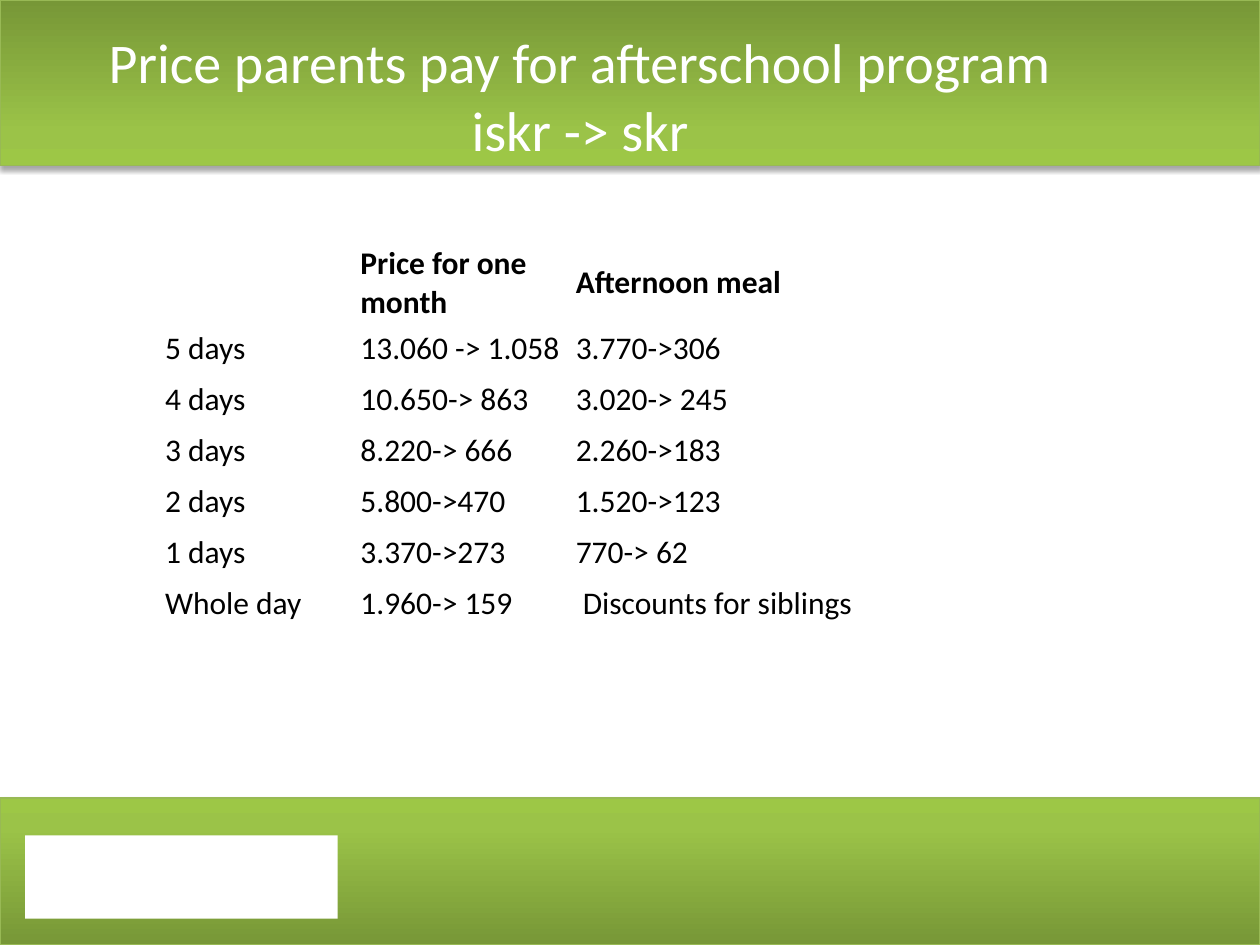
from pptx import Presentation
from pptx.dml.color import RGBColor as RGB
from pptx.enum.shapes import MSO_SHAPE as Shape
from pptx.enum.text import MSO_ANCHOR as Anchor, PP_ALIGN as Align
from pptx.oxml import parse_xml
from pptx.util import Pt

WIDE, HIGH = 720, 540
HUES = {"dark": "779737", "mid": "9BC348", "light": "9DC746",
        "edge": "98B955", "white": "FFFFFF", "black": "000000"}
TITLE = "Price parents pay for afterschool program\viskr -> skr"
ROWS = [
    ("", "Price for one month", "Afternoon meal"),
    ("5 days", "13.060 -> 1.058", "3.770->306"),
    ("4 days", "10.650-> 863", "3.020-> 245"),
    ("3 days", "8.220-> 666", "2.260->183"),
    ("2 days", "5.800->470", "1.520->123"),
    ("1 days", "3.370->273", "770-> 62"),
    ("Whole day", "1.960-> 159", " Discounts for siblings"),
]
COLS = (111.6, 123.1, 196.2)
ROW_H = 29.2
BARS = [(456, 84, 0), (0, 94.5, 180)]  # top, height, turn
STOPS = [(0, "dark"), (80, "mid"), (100, "light")]
LOOKS = {
    "title": {"size": Pt(32), "name": "Calibri", "bold": False},
    "head": {"size": Pt(18), "name": "Calibri", "bold": True},
    "body": {"size": Pt(18), "name": "Calibri", "bold": False},
}
CELL = {"vertical_anchor": Anchor.MIDDLE, "margin_left": Pt(0.75),
        "margin_right": Pt(0.75), "margin_top": Pt(0.75),
        "margin_bottom": Pt(0.75)}
NS = 'xmlns:a="http://schemas.openxmlformats.org/drawingml/2006/main"'


def color(name):
    return RGB.from_string(HUES[name])


def apply(item, vals):
    for key, val in vals.items():
        setattr(item, key, val)


def style(para, look, hue):
    for run in para.runs:
        apply(run.font, LOOKS[look])
        run.font.color.rgb = color(hue)


def add_box(slide, left, top, wide, high):
    return slide.shapes.add_shape(
        Shape.RECTANGLE, Pt(left), Pt(top), Pt(wide), Pt(high))


def add_bar(slide, top, high, turn):
    """Add a full-width gradient band with a soft shadow below."""
    bar = add_box(slide, 0, top, WIDE, high)
    bar.rotation = turn
    bar.fill.gradient()
    bar.fill.gradient_angle = 90
    stops = "".join(
        f'<a:gs pos="{pos * 1000}"><a:srgbClr val="{HUES[hue]}"/></a:gs>'
        for pos, hue in STOPS)
    props = bar.element.spPr
    old = next(props.iter("{*}gsLst"))
    old.getparent().replace(old, parse_xml(f"<a:gsLst {NS}>{stops}</a:gsLst>"))
    bar.line.color.rgb = color("edge")
    bar.line.width = Pt(0.75)
    props.append(parse_xml(
        f'<a:effectLst {NS}><a:outerShdw blurRad="{Pt(3.1)}" dist="{Pt(1.8)}"'
        f' dir="5400000" rotWithShape="0"><a:srgbClr val="{HUES["black"]}">'
        '<a:alpha val="35000"/></a:srgbClr></a:outerShdw></a:effectLst>'))


def add_prices(slide):
    frame = slide.shapes.add_table(
        len(ROWS), len(COLS), Pt(93.6), Pt(139),
        Pt(sum(COLS)), Pt(ROW_H * len(ROWS)))
    table = frame.table
    apply(table, {"first_row": False, "horz_banding": False})
    for col, wide in zip(table.columns, COLS):
        col.width = Pt(wide)
    for r, row in enumerate(ROWS):
        table.rows[r].height = Pt(ROW_H)
        for c, text in enumerate(row):
            cell = table.cell(r, c)
            apply(cell, CELL)
            cell.fill.background()
            cell.text = text
            style(cell.text_frame.paragraphs[0],
                  "body" if r else "head", "black")


def set_title(slide):
    title = slide.shapes.title
    apply(title, {"left": Pt(42.5), "top": Pt(9.4),
                  "width": Pt(578), "height": Pt(90)})
    frame = title.text_frame
    frame.text = TITLE
    apply(frame, {"vertical_anchor": Anchor.MIDDLE, "word_wrap": True})
    para = frame.paragraphs[0]
    para.alignment = Align.CENTER
    style(para, "title", "white")
    title.element.getparent().append(title.element)  # bring to front


def main():
    deck = Presentation()
    deck.slide_width, deck.slide_height = Pt(WIDE), Pt(HIGH)
    slide = deck.slides.add_slide(deck.slide_layouts[5])
    for bar in BARS:
        add_bar(slide, *bar)
    panel = add_box(slide, 14.3, 477.3, 178.6, 47.7)
    panel.shadow.inherit = False
    panel.fill.solid()
    panel.fill.fore_color.rgb = color("white")
    panel.line.fill.background()
    add_prices(slide)
    set_title(slide)
    deck.save("out.pptx")


if __name__ == "__main__":
    main()
